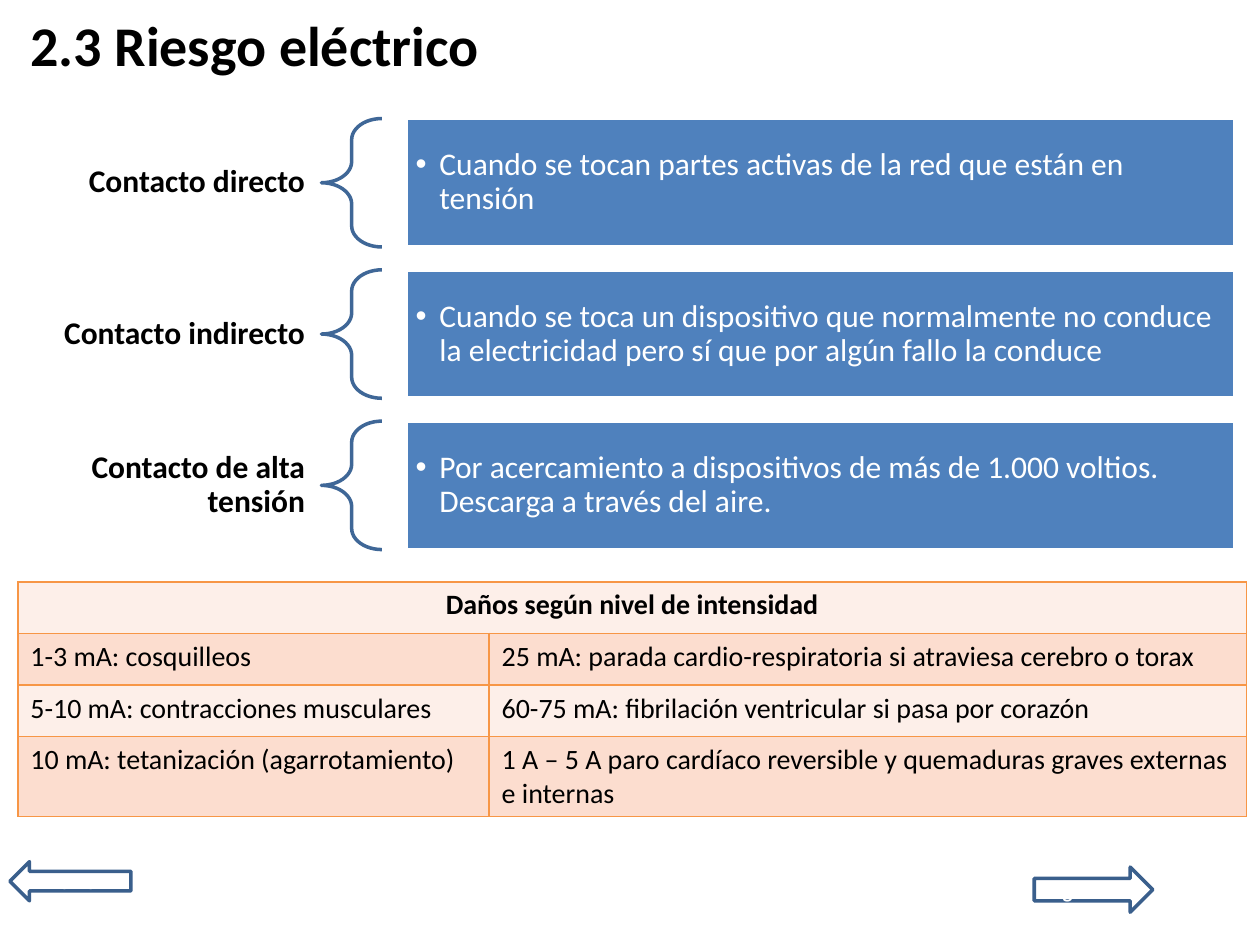
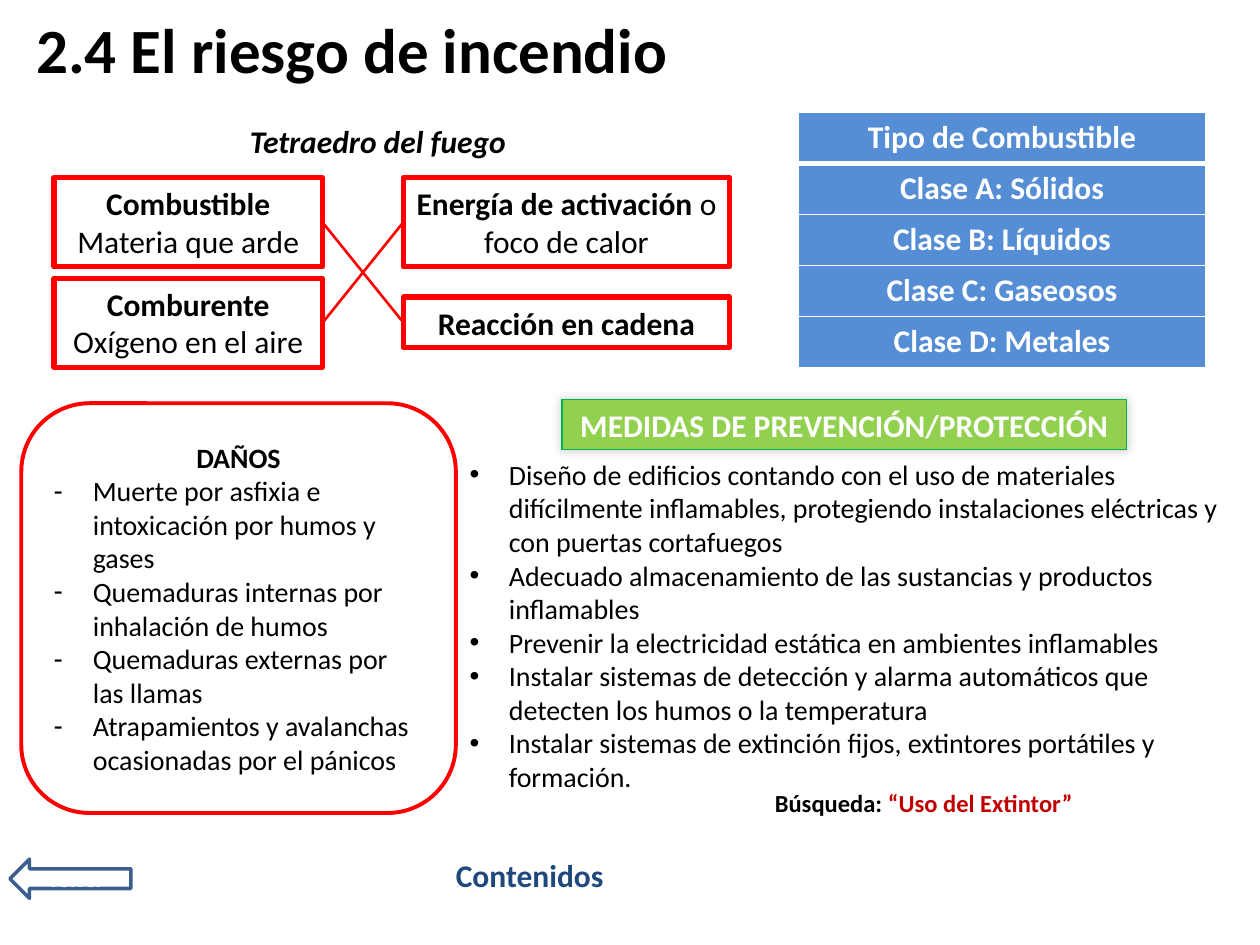
from dataclasses import dataclass
from typing import Optional, Sequence

import pptx
import pptx.dml.color
import pptx.enum.shapes
import pptx.enum.text
import pptx.oxml
import pptx.oxml.ns
import pptx.presentation
import pptx.shapes.autoshape
import pptx.slide
import pptx.table
import pptx.text.text
import pptx.util
from lxml import etree

Cm, Pt = pptx.util.Cm, pptx.util.Pt
Align, Anchor = pptx.enum.text.PP_ALIGN, pptx.enum.text.MSO_ANCHOR
Preset = pptx.enum.shapes.MSO_SHAPE
qn = pptx.oxml.ns.qn


@dataclass(frozen=True)
class Theme:
    font: str = "Calibri"
    black: str = "000000"
    white: str = "FFFFFF"
    red: str = "FF0000"
    dark_red: str = "C00000"
    navy: str = "1F497D"
    arrow_line: str = "3A5F8C"
    brace_line: str = "3F6797"
    panel: str = "4F81BD"
    fuel: str = "558ED5"
    orange: str = "F79646"
    light_band: str = "FDEFE9"
    dark_band: str = "FCDDCF"
    green: str = "92D050"
    green_line: str = "00B050"
    small: int = 12
    note: int = 14
    body: int = 16
    heading: int = 18


THEME = Theme()


@dataclass(frozen=True)
class Box:
    """Left, top, width and height in centimetres."""
    left: float
    top: float
    width: float
    height: float

    def lengths(self) -> tuple:
        return Cm(self.left), Cm(self.top), Cm(self.width), Cm(self.height)


@dataclass(frozen=True)
class Run:
    text: str
    bold: Optional[bool] = None
    color: Optional[str] = None


@dataclass(frozen=True)
class Paragraph:
    runs: Sequence[Run]
    align: Optional[Align] = None
    bullet: str = ""
    indent: float = 0.79


@dataclass(frozen=True)
class Contact:
    name: str
    description: str


CONTACTS = (
    Contact("Contacto directo", "Cuando se tocan partes activas de la red que están en tensión"),
    Contact("Contacto indirecto", "Cuando se toca un dispositivo que normalmente no conduce "
            "la electricidad pero sí que por algún fallo la conduce"),
    Contact("Contacto de alta tensión", "Por acercamiento a dispositivos de más de 1.000 voltios. "
            "Descarga a través del aire."),
)
INTENSITY_DAMAGE = (
    ("Daños según nivel de intensidad", ""),
    ("1-3 mA: cosquilleos", "25 mA: parada cardio-respiratoria si atraviesa cerebro o torax"),
    ("5-10 mA: contracciones musculares", "60-75 mA: fibrilación ventricular si pasa por corazón"),
    ("10 mA: tetanización (agarrotamiento)",
     "1 A – 5 A paro cardíaco reversible y quemaduras graves externas e internas"),
)
FUEL_TYPES = ("Tipo de Combustible", "Clase A: Sólidos", "Clase B: Líquidos",
              "Clase C: Gaseosos", "Clase D: Metales")
FIRE_DAMAGE = (
    "Muerte por asfixia e intoxicación por humos y gases",
    "Quemaduras internas por inhalación de humos",
    "Quemaduras externas por las llamas",
    "Atrapamientos y avalanchas ocasionadas por el pánicos",
)
MEASURES = (
    "Diseño de edificios contando con el uso de materiales difícilmente inflamables, "
    "protegiendo instalaciones eléctricas y con puertas cortafuegos",
    "Adecuado almacenamiento de las sustancias y productos inflamables",
    "Prevenir la electricidad estática en ambientes inflamables",
    "Instalar sistemas de detección y alarma automáticos que detecten los humos o la temperatura",
    "Instalar sistemas de extinción fijos, extintores portátiles y formación.",
)


def rgb(color: str) -> pptx.dml.color.RGBColor:
    return pptx.dml.color.RGBColor.from_string(color)


def plain(text: str, **options) -> Paragraph:
    return Paragraph((Run(text),), **options)


def write_text(frame: pptx.text.text.TextFrame, paragraphs: Sequence[Paragraph], *,
               size: int = THEME.heading, color: str = THEME.black, bold: bool = False,
               italic: bool = False, align: Align = Align.LEFT, line_spacing: float = 1.0) -> None:
    for index, content in enumerate(paragraphs):
        paragraph = frame.add_paragraph() if index else frame.paragraphs[0]
        paragraph.alignment = content.align or align
        paragraph.line_spacing = line_spacing
        if content.bullet:
            properties = paragraph._p.get_or_add_pPr()
            properties.set("marL", str(Cm(content.indent)))
            properties.set("indent", str(-Cm(content.indent)))
            etree.SubElement(properties, qn("a:buFont")).set("typeface", "Arial")
            etree.SubElement(properties, qn("a:buChar")).set("char", content.bullet)
        for part in content.runs:
            run = paragraph.add_run()
            run.text = part.text
            run.font.name = THEME.font
            run.font.size = Pt(size)
            run.font.bold = bold if part.bold is None else part.bold
            run.font.italic = italic
            run.font.color.rgb = rgb(part.color or color)


def prepare_frame(frame: pptx.text.text.TextFrame, anchor: Anchor,
                  margins: tuple = (0.25, 0.13)) -> None:
    frame.word_wrap = True
    frame.vertical_anchor = anchor
    frame.margin_left = frame.margin_right = Cm(margins[0])
    frame.margin_top = frame.margin_bottom = Cm(margins[1])


def add_text(slide: pptx.slide.Slide, box: Box, paragraphs: Sequence[Paragraph], *,
             anchor: Anchor = Anchor.TOP, margins: tuple = (0.25, 0.13), **text_format) -> None:
    frame = slide.shapes.add_textbox(*box.lengths()).text_frame
    prepare_frame(frame, anchor, margins)
    write_text(frame, paragraphs, **text_format)


def add_shape(slide: pptx.slide.Slide, preset: Preset, box: Box,
              paragraphs: Sequence[Paragraph] = (), *, line: str, line_width: float = 2,
              fill: Optional[str] = None, anchor: Anchor = Anchor.MIDDLE,
              margins: tuple = (0.25, 0.13), **text_format) -> pptx.shapes.autoshape.Shape:
    shape = slide.shapes.add_shape(preset, *box.lengths())
    shape.shadow.inherit = False
    shape.line.color.rgb = rgb(line)
    shape.line.width = Pt(line_width)
    if fill:
        shape.fill.solid()
        shape.fill.fore_color.rgb = rgb(fill)
    else:
        shape.fill.background()
    prepare_frame(shape.text_frame, anchor, margins)
    write_text(shape.text_frame, paragraphs, **text_format)
    return shape


def add_soft_shadow(shape: pptx.shapes.autoshape.Shape) -> None:
    effects = shape._element.spPr.find(qn("a:effectLst"))
    shadow = etree.SubElement(effects, qn("a:outerShdw"), blurRad=str(Pt(6)), dist="0",
                              dir="13500000", rotWithShape="0")
    shadow_color = etree.SubElement(shadow, qn("a:srgbClr"), val=THEME.black)
    etree.SubElement(shadow_color, qn("a:alpha"), val="20000")


def join_boxes(slide: pptx.slide.Slide, start: pptx.shapes.autoshape.Shape,
               end: pptx.shapes.autoshape.Shape) -> None:
    """Link the right side of one box to the left side of another."""
    connector = slide.shapes.add_connector(
        pptx.enum.shapes.MSO_CONNECTOR.STRAIGHT, 0, 0, 0, 0)
    connector.begin_connect(start, 3)
    connector.end_connect(end, 1)
    connector.line.color.rgb = rgb(THEME.red)
    connector.line.width = Pt(1.5)
    etree.SubElement(connector._element.spPr, qn("a:effectLst"))


def add_table(slide: pptx.slide.Slide, box: Box, rows: int,
              columns: Sequence[float]) -> pptx.table.Table:
    table = slide.shapes.add_table(rows, len(columns), *box.lengths()).table
    table.first_row = table.horz_banding = False
    for column, width in zip(table.columns, columns):
        column.width = Cm(width)
    return table


def format_cell(cell: pptx.table._Cell, fill: str, border: str, bottom_width: float = 1,
                top_width: float = 1) -> None:
    cell.fill.solid()
    cell.fill.fore_color.rgb = rgb(fill)
    properties = cell._tc.get_or_add_tcPr()
    widths = {"a:lnL": 1, "a:lnR": 1, "a:lnT": top_width, "a:lnB": bottom_width}
    for index, (tag, width) in enumerate(widths.items()):
        edge = pptx.oxml.parse_xml(f'<{tag} {pptx.oxml.ns.nsdecls("a")} w="{Pt(width)}"><a:solidFill>'
                                   f'<a:srgbClr val="{border}"/></a:solidFill></{tag}>')
        properties.insert(index, edge)


def add_title(slide: pptx.slide.Slide, text: str, box: Box, size: int) -> None:
    add_text(slide, box, [plain(text)], anchor=Anchor.MIDDLE, size=size, bold=True)


def add_navigation_arrow(slide: pptx.slide.Slide, preset: Preset, box: Box, text: str) -> None:
    add_shape(slide, preset, box, [plain(text)], line=THEME.arrow_line, size=THEME.small,
              color=THEME.white, bold=True, align=Align.CENTER)


def build_electric_risk(slide: pptx.slide.Slide) -> None:
    add_title(slide, "2.3 Riesgo eléctrico", Box(0.36, 0.08, 25.04, 1.6), 32)
    add_navigation_arrow(slide, Preset.LEFT_ARROW, Box(0.2, 17.37, 2.44, 0.79), "Volver")
    add_navigation_arrow(slide, Preset.RIGHT_ARROW, Box(20.85, 17.48, 2.39, 0.91), "Siguiente")

    first_top, step, height = 2.39, 3.05, 2.59
    for index, contact in enumerate(CONTACTS):
        top = first_top + index * step
        add_text(slide, Box(0.36, top, 6.15, height), [plain(contact.name)], anchor=Anchor.MIDDLE,
                 margins=(0.36, 0.13), bold=True, align=Align.RIGHT, line_spacing=0.9)
        brace = add_shape(slide, Preset.LEFT_BRACE, Box(6.48, top, 1.22, height),
                          line=THEME.brace_line)
        brace.adjustments[0] = 0.35
        add_shape(slide, Preset.RECTANGLE, Box(8.2, top, 16.69, height),
                  [plain(contact.description, bullet="•", indent=0.48)], line=THEME.white,
                  fill=THEME.panel, margins=(0.18, 0.18), color=THEME.white, line_spacing=0.9)

    table = add_table(slide, Box(0.36, 11.73, 24.77, 4.16), len(INTENSITY_DAMAGE), (9.5, 15.27))
    table.cell(0, 0).merge(table.cell(0, 1))
    for row, texts in enumerate(INTENSITY_DAMAGE):
        for column, text in enumerate(texts):
            cell = table.cell(row, column)
            format_cell(cell, THEME.dark_band if row % 2 else THEME.light_band, THEME.orange)
            if text:
                write_text(cell.text_frame, [plain(text)], size=THEME.body, bold=row == 0,
                           align=Align.LEFT if row else Align.CENTER)


def build_fire_tetrahedron(slide: pptx.slide.Slide) -> None:
    add_text(slide, Box(2.64, 2.34, 9.96, 1.02), [plain("Tetraedro del fuego")],
             bold=True, italic=True, align=Align.CENTER)
    elements = (
        (Box(1.09, 3.58, 5.41, 1.8), [plain("Combustible"),
                                      Paragraph([Run("Materia que arde", bold=False)])]),
        (Box(1.09, 5.61, 5.41, 1.8), [plain("Comburente"),
                                      Paragraph([Run("Oxígeno en el aire", bold=False)])]),
        (Box(8.13, 3.58, 6.58, 1.8), [Paragraph([Run("Energía de activación "),
                                                 Run("o foco de calor", bold=False)])]),
        (Box(8.13, 5.99, 6.58, 1.02), [plain("Reacción en cadena")]),
    )
    fuel, oxidizer, energy, reaction = [
        add_shape(slide, Preset.RECTANGLE, box, paragraphs, line=THEME.red, line_width=3,
                  anchor=Anchor.TOP, bold=True, align=Align.CENTER)
        for box, paragraphs in elements]
    join_boxes(slide, fuel, reaction)
    join_boxes(slide, oxidizer, energy)


def build_fire_risk(slide: pptx.slide.Slide) -> None:
    add_navigation_arrow(slide, Preset.LEFT_ARROW, Box(0.2, 17.32, 2.44, 0.79), "Volver")
    add_title(slide, "2.4 El riesgo de incendio", Box(0.48, 0, 24.92, 1.93), 36)
    build_fire_tetrahedron(slide)

    table = add_table(slide, Box(16.1, 2.26, 8.2, 5.15), len(FUEL_TYPES), (8.2,))
    for row, text in enumerate(FUEL_TYPES):
        cell = table.cell(row, 0)
        format_cell(cell, THEME.fuel, THEME.white, bottom_width=1 if row else 3,
                    top_width=3 if row == 1 else 1)
        write_text(cell.text_frame, [plain(text)], color=THEME.white, bold=True,
                   align=Align.CENTER)

    banner = add_shape(slide, Preset.RECTANGLE, Box(11.33, 8.05, 11.38, 1.02),
                       [plain("MEDIDAS DE PREVENCIÓN/PROTECCIÓN")], line=THEME.green_line,
                       line_width=0.75, fill=THEME.green, anchor=Anchor.TOP, color=THEME.white,
                       bold=True, align=Align.CENTER)
    add_soft_shadow(banner)
    add_shape(slide, Preset.ROUNDED_RECTANGLE, Box(0.43, 8.13, 8.76, 8.26),
              [Paragraph([Run("DAÑOS", bold=True)], align=Align.CENTER),
               *(plain(text, bullet="-") for text in FIRE_DAMAGE)],
              line=THEME.red, line_width=2.25, size=THEME.body)
    add_text(slide, Box(9.22, 9.09, 15.98, 7.09),
             [plain(text, bullet="•") for text in MEASURES], size=THEME.body)
    add_text(slide, Box(15.37, 15.75, 6.73, 0.86),
             [Paragraph([Run("Búsqueda:"), Run(" “Uso del Extintor”", color=THEME.dark_red)])],
             size=THEME.note, bold=True)
    add_text(slide, Box(8.94, 17.12, 3.66, 1.02), [plain("Contenidos")],
             color=THEME.navy, bold=True)


def main() -> None:
    presentation = pptx.Presentation()
    presentation.slide_width, presentation.slide_height = Cm(25.4), Cm(19.05)
    for build in (build_electric_risk, build_fire_risk):
        build(presentation.slides.add_slide(presentation.slide_layouts[6]))
    presentation.save("out.pptx")


if __name__ == "__main__":
    main()
